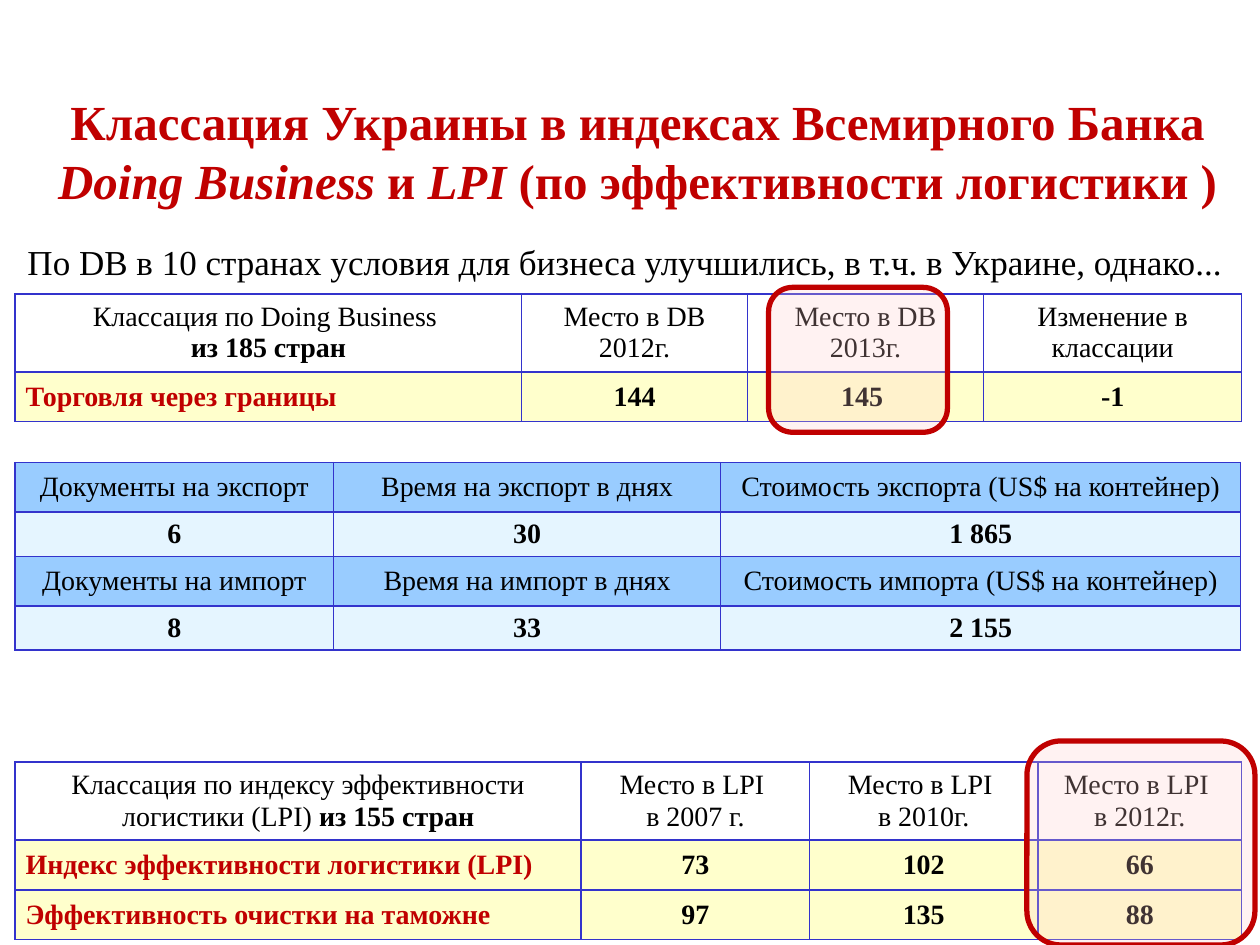
from lxml import etree
from pptx import Presentation
from pptx.dml.color import RGBColor as RGB
from pptx.enum.shapes import MSO_SHAPE as Shape
from pptx.enum.text import MSO_ANCHOR as Anchor, PP_ALIGN as Align
from pptx.oxml import parse_xml
from pptx.oxml.ns import nsdecls, qn
from pptx.util import Pt

HUES = {"red": "C00000", "black": "000000", "white": "FFFFFF", "grid": "3333CC",
        "cream": "FFFFCC", "sky": "99CCFF", "ice": "CCECFF", "pink": "FFCCCC"}
FACE = "Times New Roman"


def style(font, size, hue, bold=False):
    font.name, font.size, font.bold = FACE, Pt(size), bold
    font.color.rgb = RGB.from_string(HUES[hue])


def paint(fill, hue, alpha=100):
    fill.solid()
    fill.fore_color.rgb = RGB.from_string(HUES[hue])
    if alpha < 100:
        color = fill._xPr.find(qn("a:solidFill"))[0]
        etree.SubElement(color, qn("a:alpha")).set("val", str(alpha * 1000))


deck = Presentation()
deck.slide_width, deck.slide_height = Pt(720), Pt(540)
slide = deck.slides.add_slide(deck.slide_layouts[5])

title = slide.shapes.title
title.left, title.top, title.width, title.height = Pt(8.64), Pt(44), Pt(711.36), Pt(84)
frame = title.text_frame
frame.word_wrap, frame.vertical_anchor = True, Anchor.MIDDLE
para = frame.paragraphs[0]
para.alignment = Align.CENTER
for text, slant in [("Классация Украины в индексах Всемирного Банка ", False),
                    ("Doing Business ", True), ("и ", False), ("LPI ", True),
                    ("(по эффективности логистики )", False)]:
    run = para.add_run()
    run.text, run.font.italic = text, slant
style(para.font, 28, "red", True)

note = slide.shapes.add_textbox(Pt(8.64), Pt(134), Pt(700.5), Pt(31.5))
note.text_frame.word_wrap = True
para = note.text_frame.paragraphs[0]
para.text = "По DB в 10 странах условия для бизнеса улучшились, в т.ч. в Украине, однако..."
style(para.font, 20, "black")

HEAD = ("white", 100, False, "black")
BODY = ("cream", 100, True, "red")
LABEL = ("sky", 100, False, "black")
VALUE = ("ice", 50, True, "black")
tables = [
    (168, [289.5, 129, 135, 147.5], [
        (44.5, HEAD, ["Классация по Doing Business \n*из 185 стран", "Место в DB 2012г.",
                      "Место в DB 2013г.", "Изменение в классации"]),
        (28.5, BODY, ["Торговля через границы", "144", "145 ", " -1 "])]),
    (435.5, [323.5, 130.5, 130.5, 116.5], [
        (44.5, HEAD, ["Классация по индексу эффективности логистики (LPI) *из 155 стран",
                      "Место в LPI \nв 2007 г.", "Место в LPI \nв 2010г.",
                      "Место в LPI \nв 2012г."]),
        (28.5, BODY, ["Индекс эффективности логистики (LPI)", "73", "102", "66"]),
        (28.5, BODY, ["Эффективность очистки на таможне", "97", "135", "88"])]),
    (264.3, [182, 221.2, 297.2], [
        (28.4, LABEL, ["Документы на экспорт", "Время на экспорт в днях",
                       "Стоимость экспорта (US$ на контейнер)"]),
        (25.2, VALUE, ["6", "30", "1 865"]),
        (28.4, LABEL, ["Документы на импорт", "Время на импорт в днях",
                       "Стоимость импорта (US$ на контейнер)"]),
        (25.2, VALUE, ["8", "33", "2 155"])]),
]
for top, widths, rows in tables:
    high = sum(row[0] for row in rows)
    grid = slide.shapes.add_table(len(rows), len(widths), Pt(8.64), Pt(top),
                                  Pt(sum(widths)), Pt(high)).table
    grid.first_row = grid.horz_banding = False
    for col, width in zip(grid.columns, widths):
        col.width = Pt(width)
    for r, (height, (hue, alpha, bold, lead), texts) in enumerate(rows):
        grid.rows[r].height = Pt(height)
        for c, text in enumerate(texts):
            cell = grid.cell(r, c)
            cell.vertical_anchor = Anchor.MIDDLE
            cell.margin_left = cell.margin_right = Pt(6)
            cell.margin_top = cell.margin_bottom = Pt(3)
            props = cell._tc.get_or_add_tcPr()
            for side in ("lnL", "lnR", "lnT", "lnB"):
                props.append(parse_xml(
                    f'<a:{side} {nsdecls("a")} w="{Pt(1)}"><a:solidFill>'
                    f'<a:srgbClr val="{HUES["grid"]}"/></a:solidFill></a:{side}>'))
            paint(cell.fill, hue, alpha)
            named = lead == "red" and c == 0
            for i, line in enumerate(text.split("\n")):
                frame = cell.text_frame
                para = frame.add_paragraph() if i else frame.paragraphs[0]
                para.alignment = Align.LEFT if named else Align.CENTER
                for j, part in enumerate(line.split("*")):
                    if part:
                        run = para.add_run()
                        run.text = part
                        if j:
                            run.font.bold = True
                style(para.font, 16, "red" if named else "black", bold)

for left, top, width, height in [(586.8, 423.4, 130.3, 116.6), (439.2, 164.2, 102.2, 82.8)]:
    ring = slide.shapes.add_shape(Shape.ROUNDED_RECTANGLE, Pt(left), Pt(top),
                                  Pt(width), Pt(height))
    ring.shadow.inherit = False
    paint(ring.fill, "pink", 25)
    ring.line.color.rgb = RGB.from_string(HUES["red"])
    ring.line.width = Pt(3)

deck.save("out.pptx")
